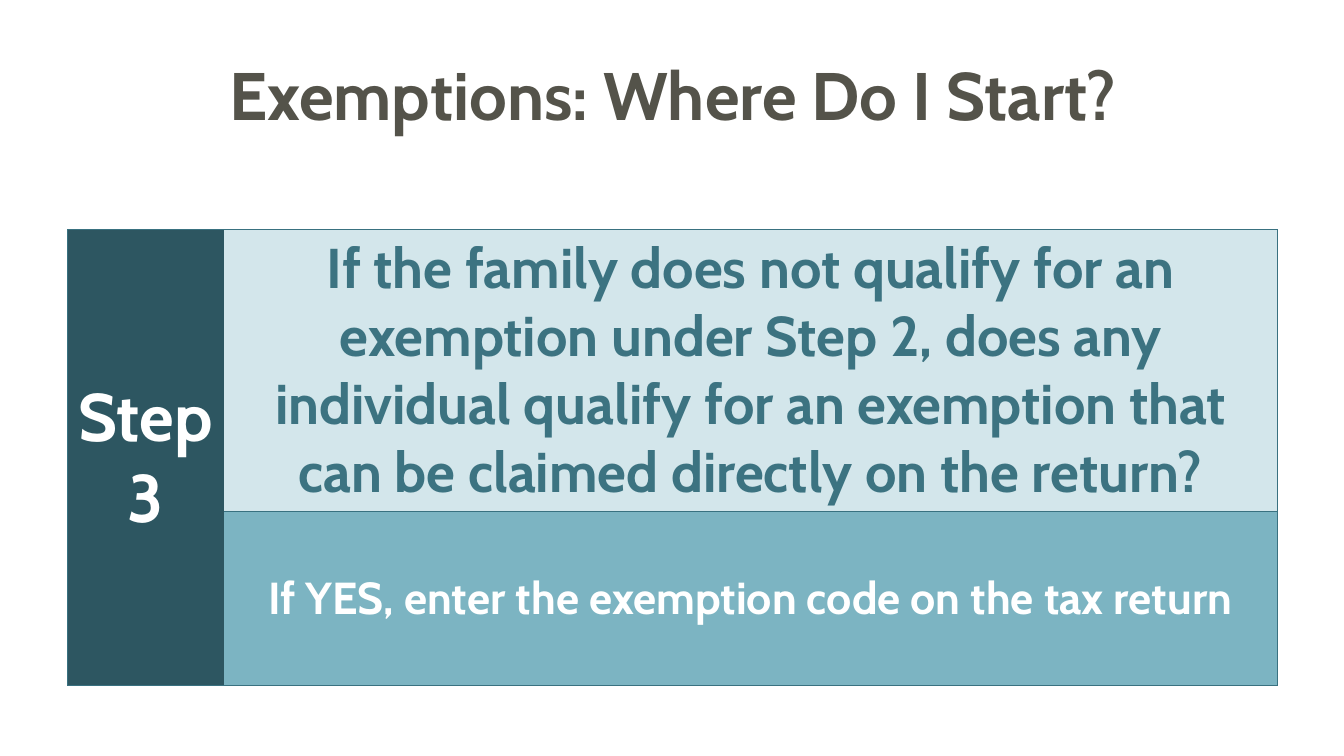
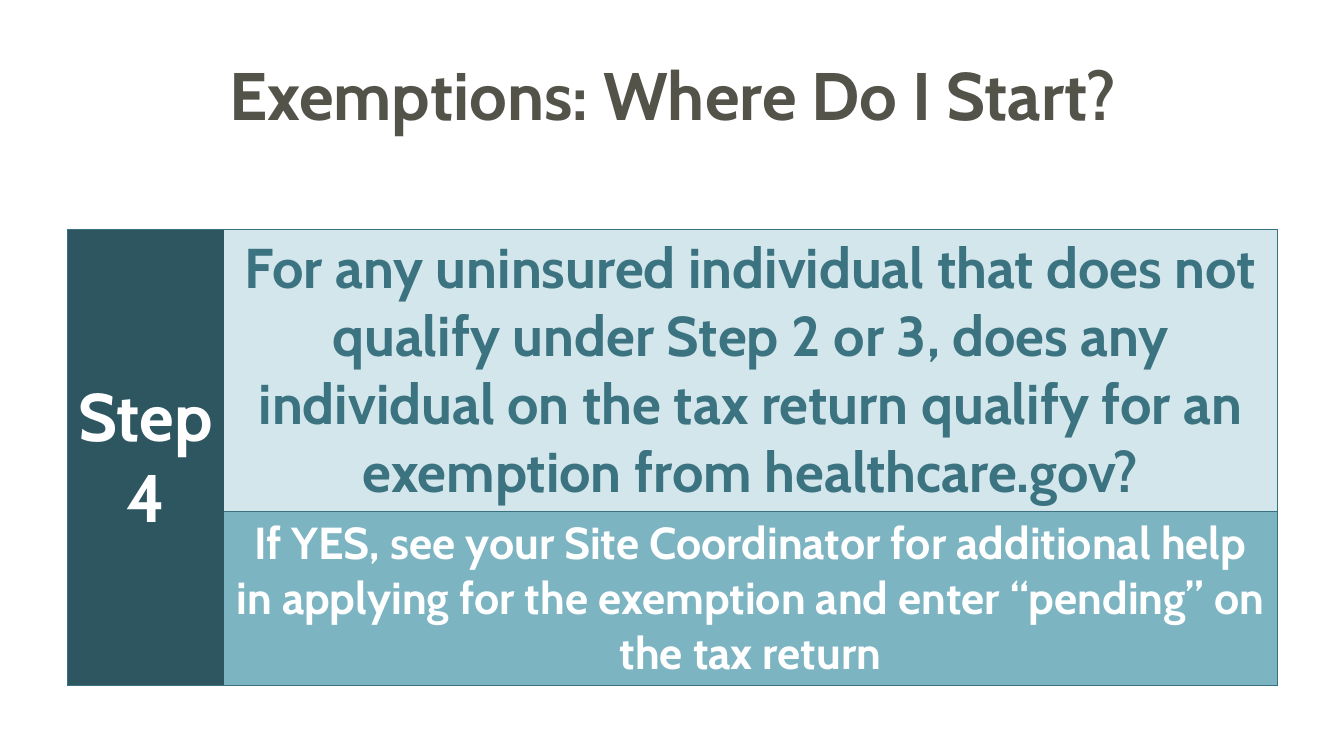
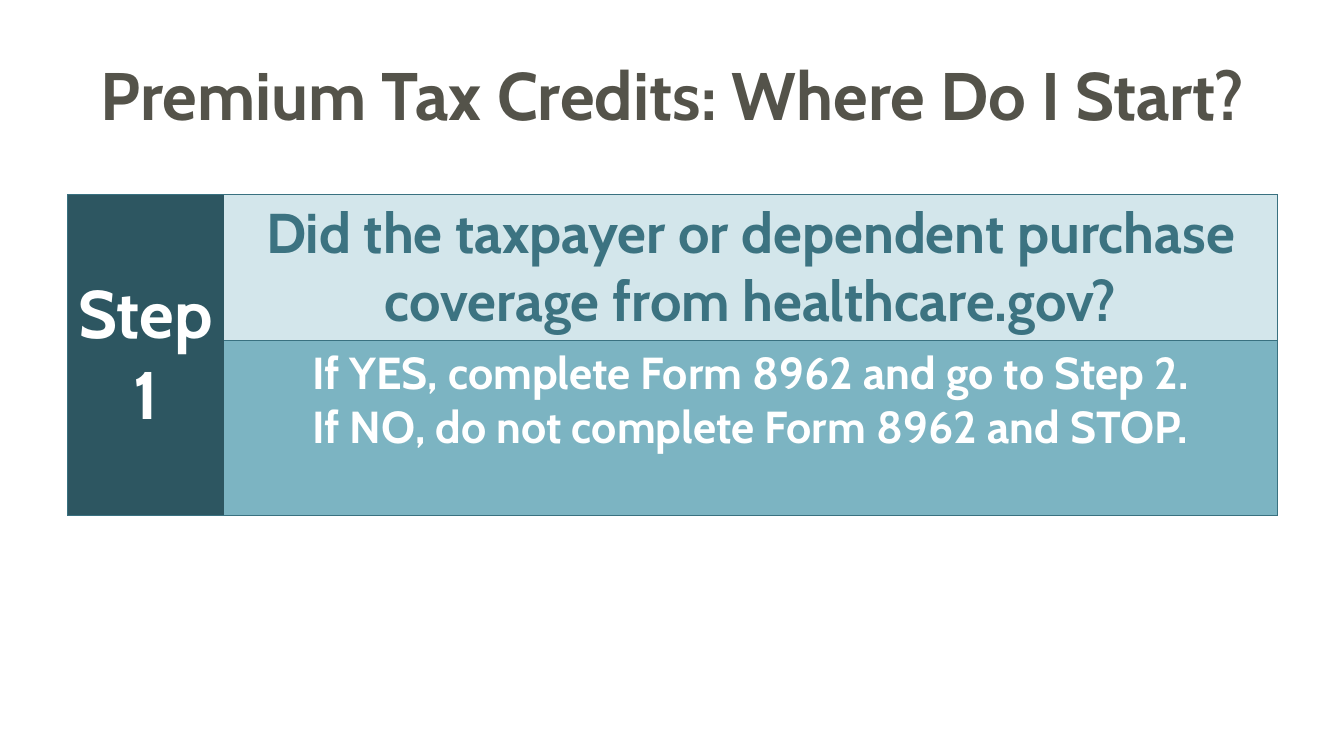
from lxml.etree import SubElement
from pptx import Presentation
from pptx.dml.color import RGBColor
from pptx.enum.text import MSO_ANCHOR, PP_ALIGN
from pptx.oxml.ns import qn
from pptx.util import Inches, Pt

TITLE, DARK, MID, PALE = "54534A", "2D5661", "7CB4C2", "D3E6EB"
QUESTION, BORDER, WHITE = "3C7381", "397180", "FFFFFF"
LEFT, WIDTH, STEP_WIDTH = 0.67, 12, 1.55
ANSWER_HEIGHT = 1.73

SLIDES = [
    {"title": "Exemptions: Where Do I Start?", "step": "Step 3", "top": 2.28, "height": 2.79,
     "question": "If the family does not qualify for an exemption under Step 2, does any "
                 "individual qualify for an exemption that can be claimed directly on the return?",
     "answer": ["If YES, enter the exemption code on the tax return"],
     "anchor": MSO_ANCHOR.MIDDLE},
    {"title": "Exemptions: Where Do I Start?", "step": "Step 4", "top": 2.28, "height": 2.79,
     "question": "For any uninsured individual that does not qualify under Step 2 or 3, does any "
                 "individual on the tax return qualify for an exemption from healthcare.gov?",
     "answer": ["If YES, see your Site Coordinator for additional help in applying for the "
                "exemption and enter “pending” on the tax return"],
     "anchor": MSO_ANCHOR.MIDDLE},
    {"title": "Premium Tax Credits: Where Do I Start?", "step": "Step 1", "top": 1.93, "height": 1.45,
     "question": "Did the taxpayer or dependent purchase coverage from healthcare.gov?",
     "answer": ["If YES, complete Form 8962 and go to Step 2.",
                "If NO, do not complete Form 8962 and STOP."],
     "anchor": MSO_ANCHOR.TOP},
]


def rgb(color):
    return RGBColor.from_string(color)


def write(tf, lines, size, color):
    tf.text = "\n".join(lines)
    for p in tf.paragraphs:
        p.alignment = PP_ALIGN.CENTER
        for r in p.runs:
            for name, value in {"name": "Cabin", "size": Pt(size), "bold": True}.items():
                setattr(r.font, name, value)
            r.font.color.rgb = rgb(color)


prs = Presentation()
prs.slide_width, prs.slide_height = Inches(13.33), Inches(7.5)

for content in SLIDES:
    s = prs.slides.add_slide(prs.slide_layouts[5])
    title = s.shapes.title
    place = {"left": LEFT, "top": 0.3, "width": WIDTH, "height": 1.25}
    for name, value in place.items():
        setattr(title, name, Inches(value))
    title.text_frame.vertical_anchor = MSO_ANCHOR.MIDDLE
    write(title.text_frame, [content["title"]], 48, TITLE)

    heights = [content["height"], ANSWER_HEIGHT]
    table = s.shapes.add_table(2, 2, Inches(LEFT), Inches(content["top"]),
                               Inches(WIDTH), Inches(sum(heights))).table
    table.first_row = table.horz_banding = False
    for column, width in zip(table.columns, [STEP_WIDTH, WIDTH - STEP_WIDTH]):
        column.width = Inches(width)
    for row, height in zip(table.rows, heights):
        row.height = Inches(height)
    table.cell(0, 0).merge(table.cell(1, 0))

    cells = [
        (0, 0, [content["step"]], 48, WHITE, DARK, "LTB", MSO_ANCHOR.MIDDLE),
        (1, 0, [], 48, WHITE, DARK, "LTB", MSO_ANCHOR.MIDDLE),
        (0, 1, [content["question"]], 40, QUESTION, PALE, "RTB", MSO_ANCHOR.MIDDLE),
        (1, 1, content["answer"], 32, WHITE, MID, "RTB", content["anchor"]),
    ]
    for row, col, lines, size, color, fill, sides, anchor in cells:
        cell = table.cell(row, col)
        cell.vertical_anchor = anchor
        tcPr = cell._tc.get_or_add_tcPr()
        for side in "LRTB":
            ln = SubElement(tcPr, qn(f"a:ln{side}"), w=str(Pt(0.75)))
            if side in sides:
                line_fill = SubElement(ln, qn("a:solidFill"))
                SubElement(line_fill, qn("a:srgbClr"), val=BORDER)
            else:
                SubElement(ln, qn("a:noFill"))
        cell.fill.solid()
        cell.fill.fore_color.rgb = rgb(fill)
        if lines:
            write(cell.text_frame, lines, size, color)

prs.save("out.pptx")
